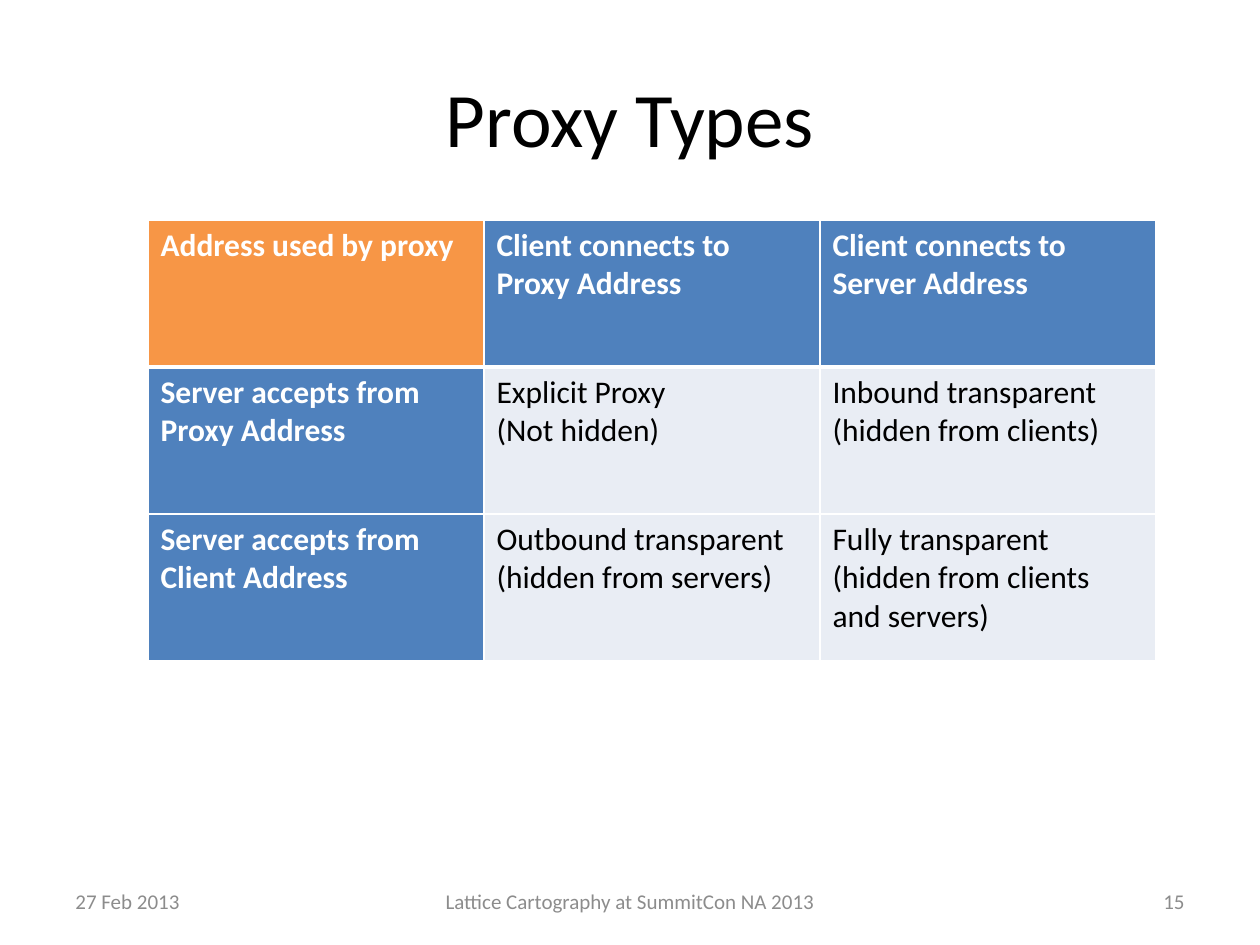
from lxml import etree
from pptx import Presentation
from pptx.dml.color import RGBColor
from pptx.enum.text import MSO_ANCHOR, PP_ALIGN
from pptx.oxml.ns import qn
from pptx.util import Emu, Pt

LEFT, CENTER, RIGHT = PP_ALIGN.LEFT, PP_ALIGN.CENTER, PP_ALIGN.RIGHT
TOP, MIDDLE = MSO_ANCHOR.TOP, MSO_ANCHOR.MIDDLE
TITLE_ONLY = 5
PX = 914400 / 126
FONT = "Calibri"
COLORS = {"text": "000000", "white": "FFFFFF", "header": "4F81BD",
          "corner": "F79646", "body": "E9EDF4", "footer": "8C8C8C"}

TITLE = "Proxy Types"
PROXY_TYPES = [
    ["Address used by proxy", "Client connects to\nProxy Address",
     "Client connects to Server Address"],
    ["Server accepts from\nProxy Address", "Explicit Proxy\n(Not hidden)",
     "Inbound transparent\n(hidden from clients)"],
    ["Server accepts from\nClient Address",
     "Outbound transparent\n(hidden from servers)",
     "Fully transparent\n(hidden from clients and servers)"],
]
FOOTERS = [  # text, left, width, alignment
    ("27 Feb 2013", 63, 294, LEFT),
    ("Lattice Cartography at SummitCon NA 2013", 420, 420, CENTER),
    ("15", 903, 294, RIGHT),
]
TABLE_LEFT, TABLE_TOP = 148, 220
COLUMN_WIDTH, ROW_HEIGHT = 336, 147
FOOTER_TOP, FOOTER_HEIGHT = 876, 50


def px(*lengths):
    return [Emu(round(length * PX)) for length in lengths]


def write(frame, text, size, color, bold=False, align=LEFT, anchor=TOP):
    frame.text = text
    frame.vertical_anchor = anchor
    for paragraph in frame.paragraphs:
        paragraph.alignment = align
        for run in paragraph.runs:
            font = run.font
            font.name, font.size, font.bold = FONT, Pt(size), bold
            font.color.rgb = RGBColor.from_string(COLORS[color])


def set_borders(cell, bottom, top):
    """Draw white cell borders; they must precede the fill in the XML."""
    properties = cell._tc.get_or_add_tcPr()
    widths = {"a:lnL": 1, "a:lnR": 1, "a:lnT": top, "a:lnB": bottom}
    for position, (tag, width) in enumerate(widths.items()):
        line = etree.Element(qn(tag), w=str(Pt(width)))
        fill = etree.SubElement(line, qn("a:solidFill"))
        etree.SubElement(fill, qn("a:srgbClr"), val=COLORS["white"])
        properties.insert(position, line)


def add_proxy_table(slide):
    rows, columns = len(PROXY_TYPES), len(PROXY_TYPES[0])
    table = slide.shapes.add_table(
        rows, columns, *px(TABLE_LEFT, TABLE_TOP, columns * COLUMN_WIDTH,
                           rows * ROW_HEIGHT)).table
    table.first_col = True
    table.horz_banding = False
    for r, labels in enumerate(PROXY_TYPES):
        for c, label in enumerate(labels):
            cell = table.cell(r, c)
            is_header = r == 0 or c == 0
            fill = "corner" if r == c == 0 else "header" if is_header else "body"
            cell.fill.solid()
            cell.fill.fore_color.rgb = RGBColor.from_string(COLORS[fill])
            write(cell.text_frame, label, 18,
                  "white" if is_header else "text", bold=is_header)
            set_borders(cell, bottom=3 if r == 0 else 1, top=3 if r == 1 else 1)


def main():
    deck = Presentation()
    deck.slide_width, deck.slide_height = px(1260, 945)
    slide = deck.slides.add_slide(deck.slide_layouts[TITLE_ONLY])

    title = slide.shapes.title
    title.left, title.top, title.width, title.height = px(63, 38, 1134, 157)
    write(title.text_frame, TITLE, 44, "text", align=CENTER, anchor=MIDDLE)

    add_proxy_table(slide)

    for text, left, width, align in FOOTERS:
        footer = slide.shapes.add_textbox(
            *px(left, FOOTER_TOP, width, FOOTER_HEIGHT))
        footer.text_frame.word_wrap = True
        write(footer.text_frame, text, 12, "footer", align=align, anchor=MIDDLE)

    deck.save("out.pptx")


if __name__ == "__main__":
    main()
